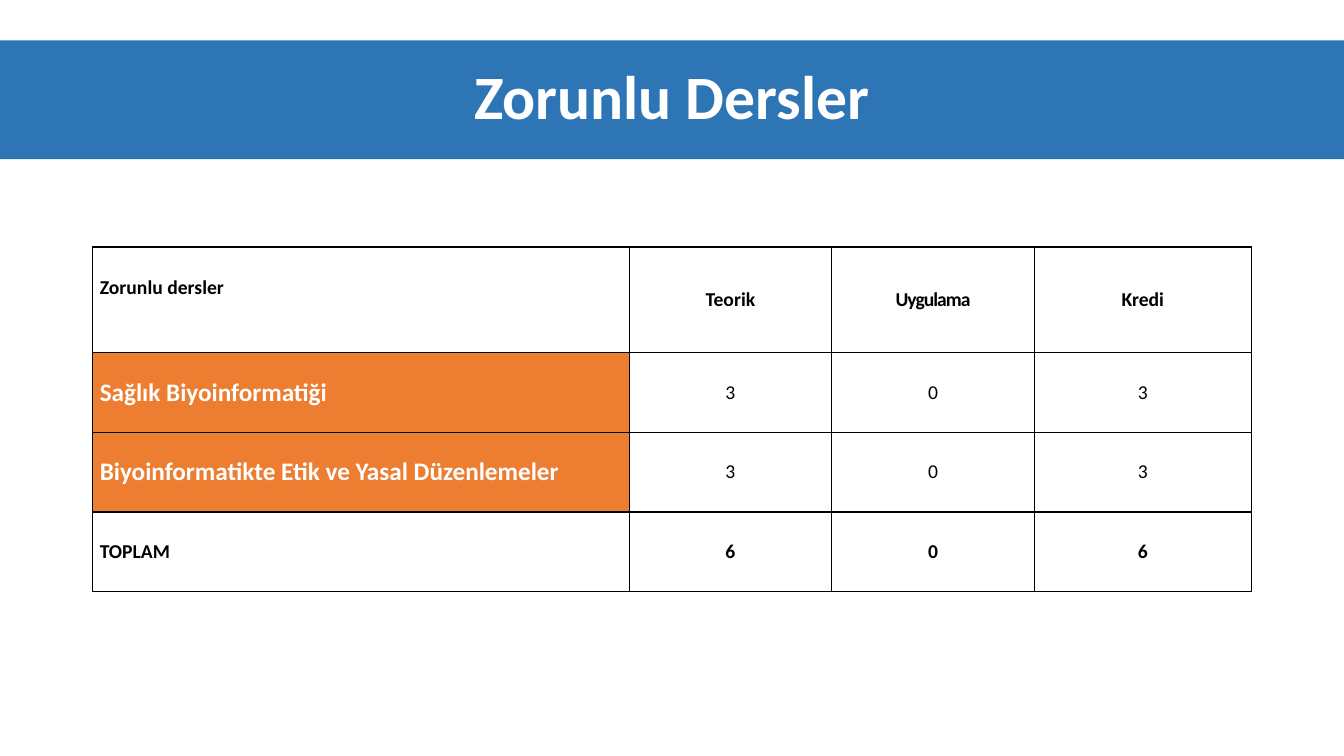
from dataclasses import dataclass

from lxml.etree import SubElement
from pptx import Presentation
from pptx.dml.color import RGBColor
from pptx.enum.shapes import MSO_SHAPE
from pptx.enum.text import MSO_ANCHOR, PP_ALIGN
from pptx.oxml.ns import qn
from pptx.util import Inches, Pt

BLUE = RGBColor(0x2E, 0x75, 0xB6)
ORANGE = RGBColor(0xED, 0x7D, 0x31)
WHITE = RGBColor(0xFF, 0xFF, 0xFF)
BLACK = RGBColor(0x00, 0x00, 0x00)
FONT = "Calibri"
COLUMN_WIDTHS = (5.32, 2.01, 2.01, 2.15)


@dataclass
class CourseRow:
    label: str
    values: tuple[str, str, str]
    height: float = 0.79
    is_course: bool = False


ROWS = [
    CourseRow("Zorunlu dersler", ("Teorik", "Uygulama", "Kredi"), height=1.05),
    CourseRow("Sağlık Biyoinformatiği", ("3", "0", "3"), is_course=True),
    CourseRow("Biyoinformatikte Etik ve Yasal Düzenlemeler", ("3", "0", "3"), is_course=True),
    CourseRow("TOPLAM", ("6", "0", "6")),
]


def write(frame, text: str, size: float, color: RGBColor, bold: bool, align: PP_ALIGN):
    para = frame.paragraphs[0]
    para.alignment = align
    span = para.add_run()
    span.text = text
    span.font.name = FONT
    span.font.size = Pt(size)
    span.font.bold = bold
    span.font.color.rgb = color
    return span


def add_borders(cell) -> None:
    properties = cell._tc.get_or_add_tcPr()
    for position, side in enumerate(("lnL", "lnR", "lnT", "lnB")):
        line = SubElement(properties, qn(f"a:{side}"), w=str(Pt(1)))
        fill = SubElement(line, qn("a:solidFill"))
        SubElement(fill, qn("a:srgbClr"), val=str(BLACK))
        properties.insert(position, line)


def fill_cell(cell, text: str, size: float, color: RGBColor, bold: bool, align: PP_ALIGN):
    cell.vertical_anchor = MSO_ANCHOR.MIDDLE
    cell.margin_left = cell.margin_right = Inches(0.07)
    cell.margin_top = cell.margin_bottom = 0
    cell.fill.background()
    add_borders(cell)
    return write(cell.text_frame, text, size, color, bold, align)


def add_title(page, text: str) -> None:
    band = page.shapes.add_shape(
        MSO_SHAPE.RECTANGLE, 0, Inches(0.4), Inches(13.33), Inches(1.18))
    band.shadow.inherit = False
    band.fill.solid()
    band.fill.fore_color.rgb = BLUE
    band.line.fill.background()
    band.text_frame.vertical_anchor = MSO_ANCHOR.MIDDLE
    write(band.text_frame, text, 44, WHITE, True, PP_ALIGN.CENTER)
    band.text_frame.paragraphs[0].line_spacing = 0.9


def add_course_table(page, rows: list[CourseRow]) -> None:
    table = page.shapes.add_table(
        len(rows), len(COLUMN_WIDTHS), Inches(0.92), Inches(2.45),
        Inches(sum(COLUMN_WIDTHS)), Inches(sum(row.height for row in rows))).table
    table.first_row = table.horz_banding = False
    for column, width in zip(table.columns, COLUMN_WIDTHS):
        column.width = Inches(width)

    for index, row in enumerate(rows):
        table.rows[index].height = Inches(row.height)
        label = table.cell(index, 0)
        size, color = (18, WHITE) if row.is_course else (14, BLACK)
        fill_cell(label, row.label, size, color, True, PP_ALIGN.LEFT)
        if row.is_course:
            label.fill.solid()
            label.fill.fore_color.rgb = ORANGE
        for column, value in enumerate(row.values, start=1):
            span = fill_cell(table.cell(index, column), value, 14, BLACK,
                             not row.is_course, PP_ALIGN.CENTER)
            if value == "Uygulama":  # tightened letter spacing
                span.font._element.set("spc", "-70")

    # The heading of the first column sits half a line above the middle
    table.cell(0, 0).margin_bottom = Inches(0.24)


def main() -> None:
    deck = Presentation()
    deck.slide_width, deck.slide_height = Inches(13.33), Inches(7.5)
    page = deck.slides.add_slide(deck.slide_layouts[6])
    add_title(page, "Zorunlu Dersler")
    add_course_table(page, ROWS)
    deck.save("out.pptx")


if __name__ == "__main__":
    main()
